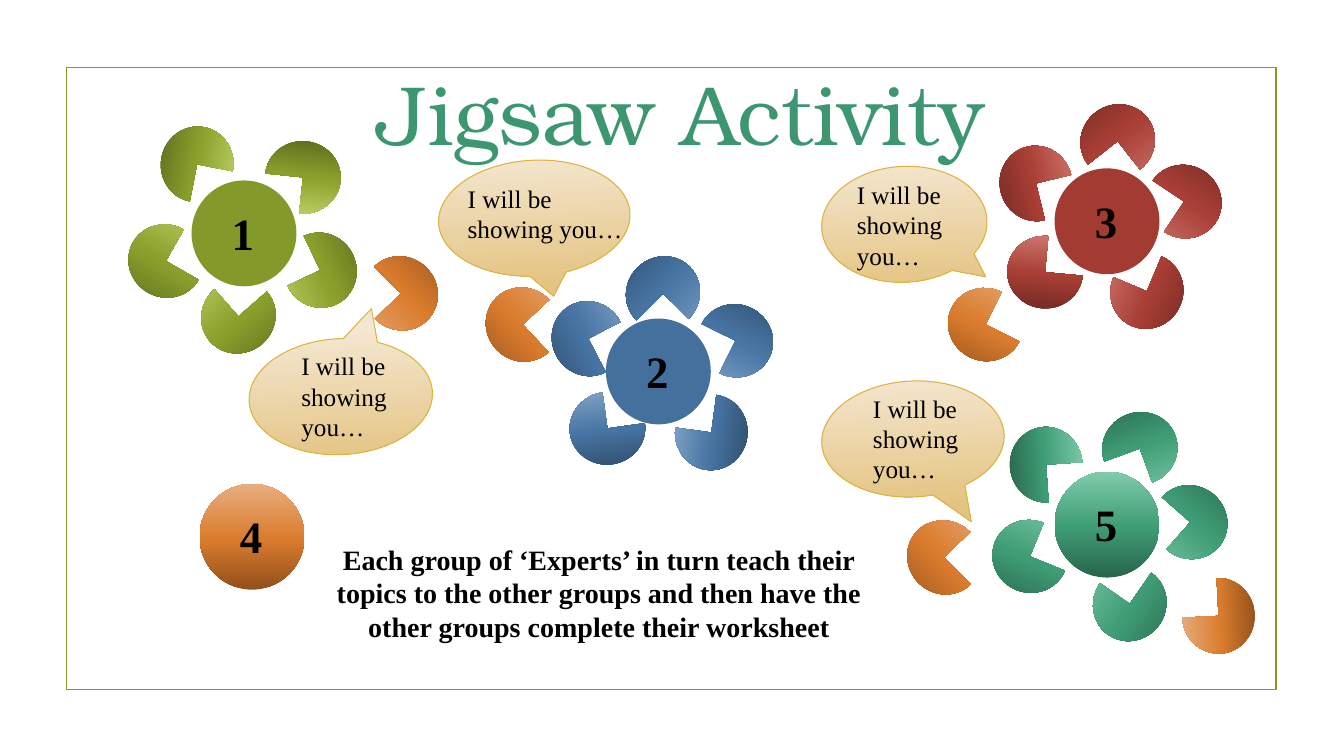
from copy import deepcopy

from pptx import Presentation
from pptx.dml.color import RGBColor as Rgb
from pptx.enum.shapes import MSO_SHAPE as Kind
from pptx.enum.text import MSO_AUTO_SIZE as Fit, PP_ALIGN as Align
from pptx.oxml.ns import qn
from pptx.util import Pt

PX = 9144
HEX = {
    "moss": "83992A", "blue": "44709D", "red": "A23C33",
    "title": "3C9770", "ink": "000000", "gold": "DEB340",
    "moss0": "58671C", "moss1": "89A02C", "moss2": "C1D66B",
    "blue0": "2E4B69", "blue1": "4774A3", "blue2": "88A9CB",
    "red0": "6D2822", "red1": "A93F35", "red2": "D47F77",
    "jade0": "28654B", "jade1": "3F9D75", "jade2": "7FCCAB",
    "rust0": "92501A", "rust1": "DA7C2E", "rust2": "E8AE7E",
    "sand0": "F4E7D1", "sand1": "E4C482",
}
SERIF = "Times New Roman"
TITLE = {"name": "TeX Gyre Bonum", "size": Pt(60)}
DIGIT = {"name": SERIF, "size": Pt(32), "bold": True}
SPEECH = {"name": SERIF, "size": Pt(18)}
TASK = {"name": SERIF, "size": Pt(20), "bold": True}

FLOWERS = [
    ("1", "moss", "moss", (190, 179),
     [(158, 127, 101.2), (127, 223, 29.6), (199, 278, 318.8),
      (280, 232, 244.6), (263, 140, 186)]),
    ("2", "blue", "blue", (601, 316),
     [(546, 300, 62.5), (565, 389, 352.1), (668, 393, 277.7),
      (692, 302, 206.4), (620, 255, 134.6)]),
    ("3", "red", "red", (1046, 167),
     [(999, 234, 5.3), (990, 146, 76.2), (1100, 253, 292.8),
      (1137, 164, 213.7), (1071, 104, 141.8)]),
    ("4", None, "rust", (198, 480), []),
    ("5", None, "jade", (1046, 468),
     [(1000, 425, 86.1), (984, 516, 22.2), (1083, 563, 304.7),
      (1143, 482, 221.3), (1093, 409, 159.9)]),
]
EXPERTS = [(481, 286, 47), (899, 517, 45.6), (1171, 575, 267.2),
           (940, 286, 26.7), (360, 255, 225.3)]
BUBBLES = [
    ((247, 336, 182, 115), (0.192, -0.745), (289, 343, 162, 101)),
    ((435, 159, 190, 115), (0.079, 0.681), (454, 177, 181, 71)),
    ((815, 165, 164, 115), (0.475, 0.489), (840, 173, 164, 101)),
    ((815, 378, 181, 115), (0.295, 0.738), (856, 385, 161, 101)),
]


def tint(name):
    """Return the named colour."""
    return Rgb.from_string(HEX[name])


def scale(box):
    """Turn px lengths into EMU."""
    return [n * PX for n in box]


def blend(shape, name, marks, angle):
    """Fill a shape with a linear gradient of numbered tones."""
    fill = shape.fill
    fill.gradient()
    fill.gradient_angle = angle
    stops = next(shape._element.iter(qn("a:gsLst")))
    while len(stops) < len(marks):
        stops.append(deepcopy(stops[0]))
    for i, (stop, mark) in enumerate(zip(fill.gradient_stops, marks)):
        stop.color.rgb = tint(f"{name}{i}")
        stop.position = mark


def shade(shape, name):
    """Give a shape the dark-to-light upward gradient."""
    blend(shape, name, (0, 0.48, 1), 90)


def draw(slide, kind, box, edge=None, width=0, turn=0):
    """Add a flat shape with an optional outline."""
    shape = slide.shapes.add_shape(kind, *scale(box))
    shape.shadow.inherit = False
    shape.rotation = turn
    if edge:
        shape.line.color.rgb = tint(edge)
        shape.line.width = Pt(width)
    else:
        shape.line.fill.background()
    return shape


def write(slide, box, text, style, hue="ink", align=Align.LEFT):
    """Add a wrapped text box."""
    frame = slide.shapes.add_textbox(*scale(box)).text_frame
    frame.word_wrap = True
    frame.auto_size = Fit.SHAPE_TO_FIT_TEXT
    para = frame.paragraphs[0]
    para.alignment = align
    run = para.add_run()
    run.text = text
    for key, value in style.items():
        setattr(run.font, key, value)
    run.font.color.rgb = tint(hue)


def petal(slide, name, left, top, turn):
    """Add one turned pie piece."""
    shade(draw(slide, Kind.PIE, (left, top, 75, 72), turn=turn), name)


def flower(slide, digit, flat, name, spot, petals):
    """Add a numbered hub with its petals."""
    left, top = spot
    hub = draw(slide, Kind.OVAL, (left, top, 104, 105))
    if flat:
        hub.fill.solid()
        hub.fill.fore_color.rgb = tint(flat)
    else:
        shade(hub, name)
    write(slide, (left + 30, top + 20, 45, 64), digit, DIGIT)
    for place in petals:
        petal(slide, name, *place)


def bubble(slide, box, tip, area):
    """Add a speech bubble with its words."""
    shape = draw(slide, Kind.OVAL_CALLOUT, box, "gold", 0.75, 357)
    for i, value in enumerate(tip):
        shape.adjustments[i] = value
    blend(shape, "sand", (0, 1), 270)
    write(slide, area, "I will be showing you…", SPEECH)


def main():
    """Build and save the slide."""
    deck = Presentation()
    deck.slide_width, deck.slide_height = scale((1333, 750))
    slide = deck.slides.add_slide(deck.slide_layouts[6])
    border = draw(slide, Kind.RECTANGLE, (66, 67, 1200, 617), "moss", 1.25)
    border.fill.background()
    write(slide, (101, 56, 1149, 111), "Jigsaw Activity", TITLE,
          "title", Align.CENTER)
    for item in FLOWERS:
        flower(slide, *item)
    for place in EXPERTS:
        petal(slide, "rust", *place)
    for item in BUBBLES:
        bubble(slide, *item)
    write(slide, (317, 533, 554, 111),
          "Each group of ‘Experts’ in turn teach their topics to the other "
          "groups and then have the other groups complete their worksheet",
          TASK, align=Align.CENTER)
    deck.save("out.pptx")


if __name__ == "__main__":
    main()
